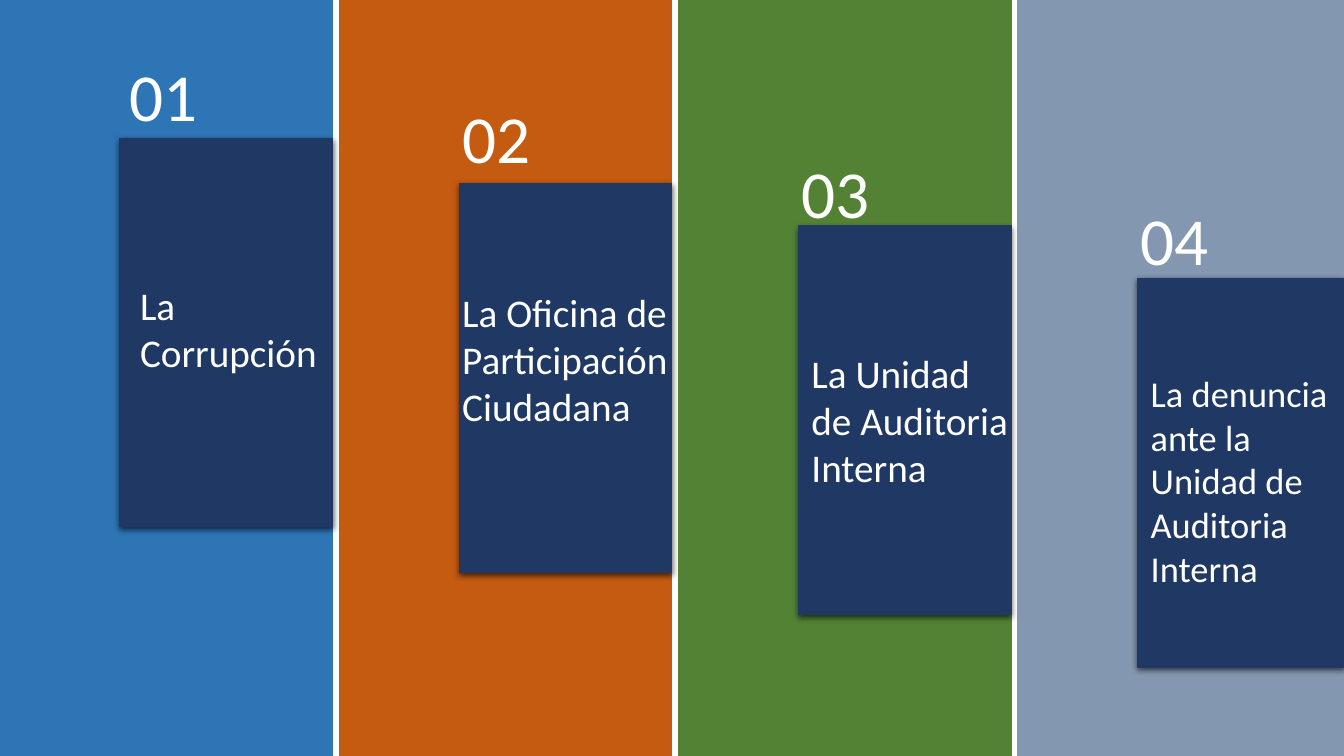
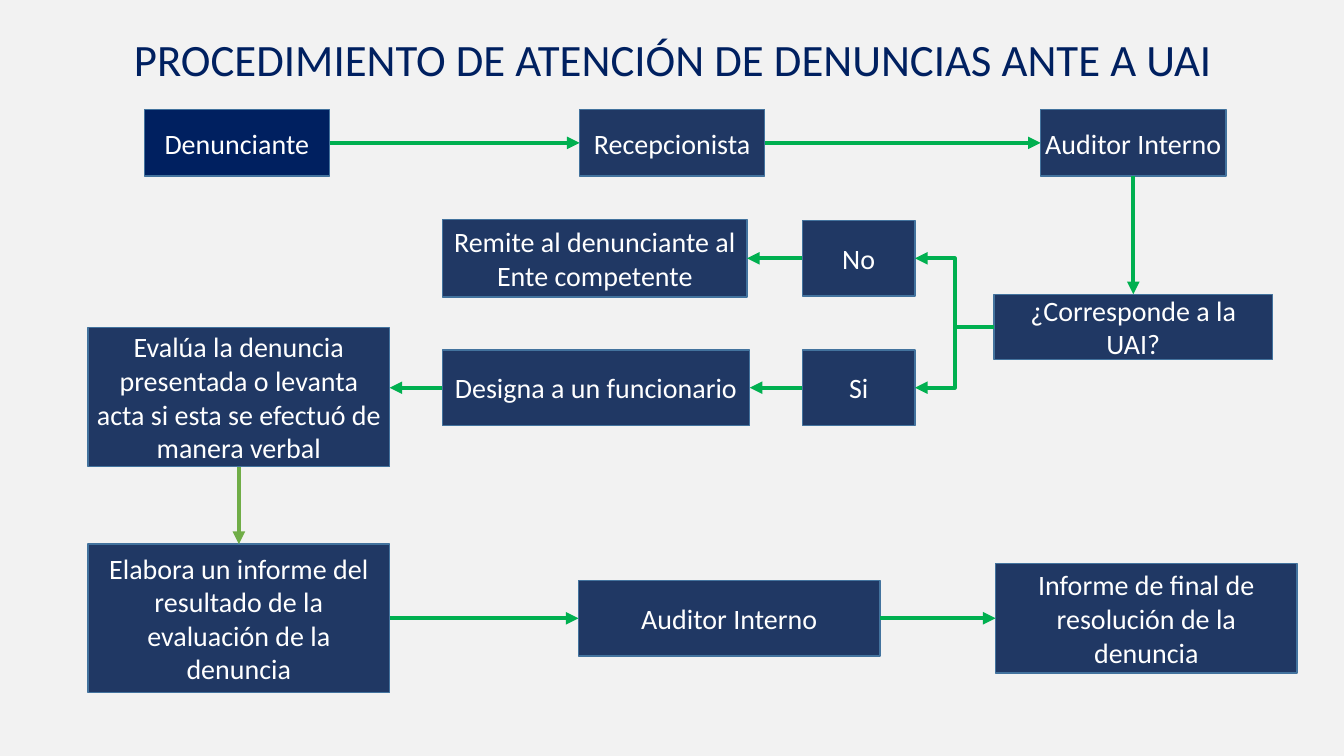
from lxml.etree import SubElement
from pptx import Presentation
from pptx.dml.color import RGBColor
from pptx.enum.shapes import MSO_CONNECTOR as LINK, MSO_SHAPE as SHAPE
from pptx.enum.text import MSO_ANCHOR as ANCHOR, PP_ALIGN as ALIGN
from pptx.oxml.ns import qn
from pptx.util import Cm, Pt

NAVY, DEEP, WHITE, GREEN, LIME = "203864", "002060", "FFFFFF", "00B050", "70AD47"
EDGE, PALE = "43739E", "F2F2F2"
TOP, LEFT, BOTTOM, RIGHT = range(4)
SLIDE_WIDTH, SLIDE_HEIGHT = 33.87, 19.05


def color(value):
    """Turn a hex string into a colour."""
    return RGBColor.from_string(value)


class Painter:
    """Holds the deck style and draws on the current slide."""

    font = "Calibri"

    def __init__(self):
        """Open a widescreen deck."""
        self.deck = Presentation()
        self.deck.slide_width = Cm(SLIDE_WIDTH)
        self.deck.slide_height = Cm(SLIDE_HEIGHT)

    def page(self, background):
        """Start a blank slide with a plain background."""
        self.slide = self.deck.slides.add_slide(self.deck.slide_layouts[6])
        fill = self.slide.background.fill
        fill.solid()
        fill.fore_color.rgb = color(background)

    def put_text(self, shape, text, size, ink, align, insets):
        """Put styled text in a shape, with left, top, right, bottom insets."""
        frame = shape.text_frame
        frame.text = text
        frame.word_wrap = True
        frame.vertical_anchor = ANCHOR.MIDDLE
        frame.margin_left, frame.margin_top, frame.margin_right, frame.margin_bottom = map(Cm, insets)
        para = frame.paragraphs[0]
        para.alignment = align
        for span in para.runs:
            span.font.name = self.font
            span.font.size = Pt(size)
            span.font.color.rgb = color(ink)

    def label(self, left, top, width, height, text, size, ink, align=ALIGN.LEFT):
        """Add a text box."""
        box = self.slide.shapes.add_textbox(Cm(left), Cm(top), Cm(width), Cm(height))
        self.put_text(box, text, size, ink, align, (0.25, 0.13, 0.25, 0.13))

    def block(self, left, top, width, height, fill, line, weight=1):
        """Add a flat rectangle that stays inside the slide."""
        width = min(width, SLIDE_WIDTH - left)
        box = self.slide.shapes.add_shape(
            SHAPE.RECTANGLE, Cm(left), Cm(top), Cm(width), Cm(height))
        box.shadow.inherit = False
        box.fill.solid()
        box.fill.fore_color.rgb = color(fill)
        box.line.color.rgb = color(line)
        box.line.width = Pt(weight)
        return box

    def panel(self, left, top, width, height, text, size, insets):
        """Add a navy card with a soft shadow."""
        box = self.block(left, top, width, height, NAVY, NAVY, 0.75)
        effects = box._element.spPr.find(qn("a:effectLst"))
        shadow = SubElement(effects, qn("a:outerShdw"), blurRad="57150",
                            dist="19050", dir="5400000", rotWithShape="0")
        tint = SubElement(shadow, qn("a:srgbClr"), val="000000")
        SubElement(tint, qn("a:alpha"), val="63000")
        self.put_text(box, text, size, WHITE, ALIGN.LEFT, insets)

    def step(self, center_x, center_y, width, height, text, fill=NAVY, inset=0.18):
        """Add a flowchart box around a centre point."""
        box = self.block(center_x - width / 2, center_y - height / 2, width, height, fill, EDGE)
        self.put_text(box, text, 20, WHITE, ALIGN.CENTER, (inset, 0, inset, 0))
        return box

    def arrow(self, start, start_side, end, end_side, kind=LINK.STRAIGHT, ink=GREEN, level=False):
        """Join two boxes; a level arrow meets the right edge at its own height."""
        link = self.slide.shapes.add_connector(kind, 0, 0, 0, 0)
        link.begin_connect(start, start_side)
        if level:
            link.end_x, link.end_y = end.left + end.width, link.begin_y
        else:
            link.end_connect(end, end_side)
        link.line.color.rgb = color(ink)
        link.line.width = Pt(3)
        properties = link._element.spPr
        SubElement(properties.find(qn("a:ln")), qn("a:tailEnd"), type="triangle")
        SubElement(properties, qn("a:effectLst"))


def topics(painter):
    """Draw the four topic columns."""
    painter.page(WHITE)
    columns = [
        ("2E75B6", 3.48, 3.02, 1.52, "La Corrupción", 28, 0.51, 1.22),
        ("C55A11", 4.62, 2.85, 2.59, "La Oficina de Participación Ciudadana", 28, 0.08, 1.94),
        ("548235", 5.69, 2.85, 3.96, "La Unidad de Auditoria Interna", 28, 0.33, 1),
        ("8497B0", 7.01, 2.85, 5.16, "La denuncia ante la Unidad de Auditoria Interna", 26, 0.33, 0.62),
    ]
    for index, (fill, top, number_left, number_top, text, size, inset, bottom) in enumerate(columns):
        left = index * 8.55
        painter.block(left, 0, 8.38, SLIDE_HEIGHT, fill, fill)
        painter.panel(left + 3.02, top, 5.36, 9.8, text, size, (inset, 1, 0.05, bottom))
        painter.label(left + number_left, number_top, 2.49, 1.73, f"{index + 1:02}", 48, WHITE)


def procedure(painter):
    """Draw the complaint flowchart."""
    painter.page(PALE)
    painter.label(0.89, 0.66, 32.16, 1.63, "PROCEDIMIENTO DE ATENCIÓN DE DENUNCIAS ANTE A UAI",
                  32, DEEP, ALIGN.CENTER)
    people = [(5.97, "Denunciante", DEEP), (16.94, "Recepcionista", NAVY), (28.56, "Auditor Interno", NAVY)]
    sender, desk, auditor = [
        painter.step(x, 3.6, 4.67, 1.68, text, fill, 0) for x, text, fill in people]
    question = painter.step(28.56, 8.24, 7.01, 1.65, "¿Corresponde a la UAI?")
    no, yes = [painter.step(21.64, y, 2.84, 1.9, text) for y, text in ((6.51, "No"), (9.77, "Si"))]
    refer = painter.step(14.99, 6.51, 7.67, 1.96, "Remite al denunciante al Ente competente")
    assign = painter.step(15.02, 9.77, 7.75, 1.9, "Designa a un funcionario")
    assess = painter.step(6.02, 10.01, 7.6, 3.5,
                          "Evalúa la denuncia presentada o levanta acta si esta se efectuó de manera verbal")
    report = painter.step(6.02, 15.58, 7.6, 3.74,
                          "Elabora un informe del resultado de la evaluación de la denuncia")
    review = painter.step(18.38, 15.58, 7.6, 1.9, "Auditor Interno")
    final = painter.step(28.89, 15.58, 7.6, 2.77, "Informe de final de resolución de la denuncia")

    for start, end in ((sender, desk), (desk, auditor), (report, review), (review, final)):
        painter.arrow(start, RIGHT, end, LEFT)
    for start, end in ((no, refer), (yes, assign)):
        painter.arrow(start, LEFT, end, RIGHT)
    for answer in (no, yes):
        painter.arrow(question, LEFT, answer, RIGHT, LINK.ELBOW)
    painter.arrow(assign, LEFT, assess, RIGHT, level=True)
    painter.arrow(auditor, BOTTOM, question, TOP)
    painter.arrow(assess, BOTTOM, report, TOP, ink=LIME)


def main():
    """Build and save the deck."""
    painter = Painter()
    topics(painter)
    procedure(painter)
    painter.deck.save("out.pptx")


if __name__ == "__main__":
    main()
